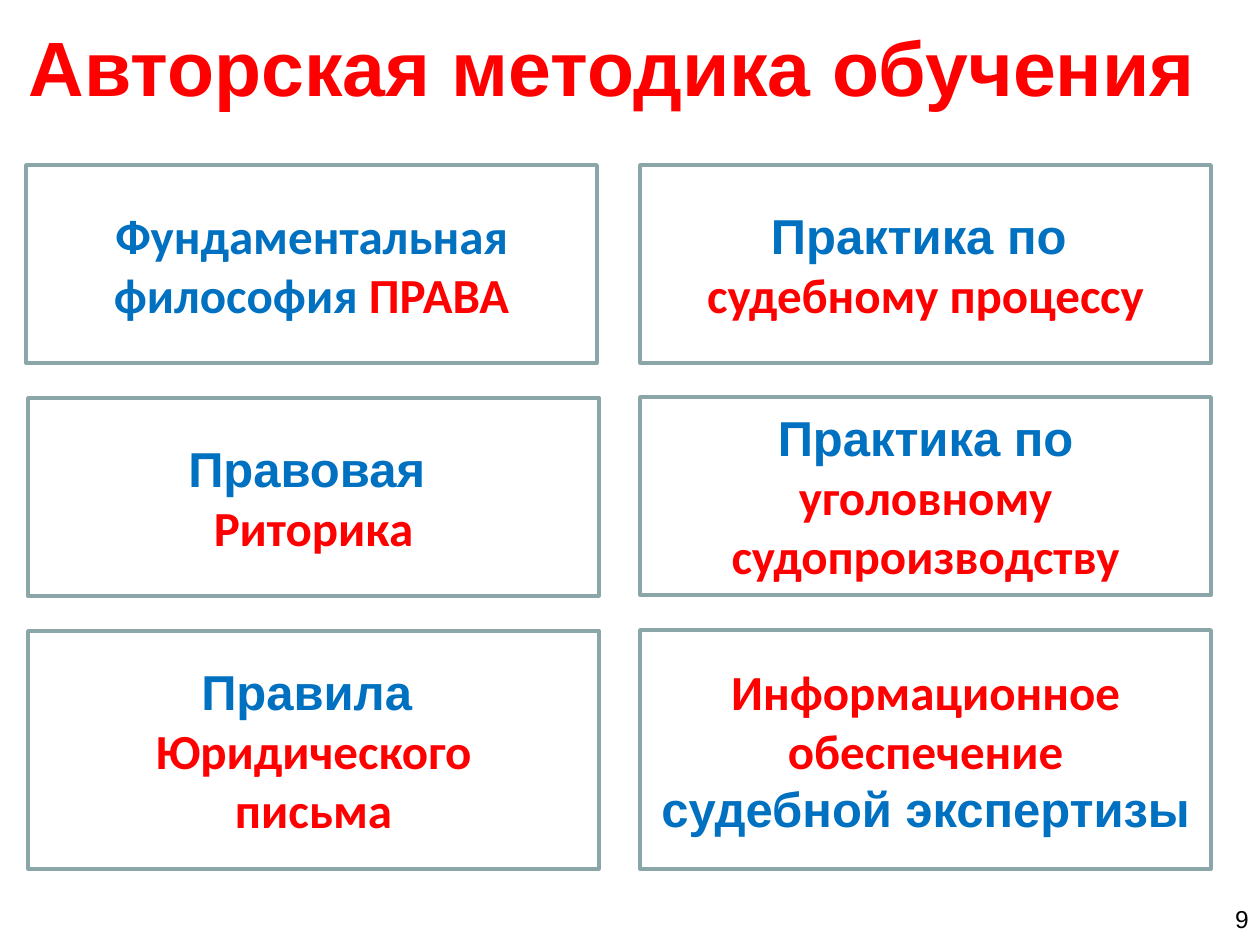
from typing import NamedTuple

from pptx import Presentation
from pptx.dml.color import RGBColor
from pptx.enum.shapes import MSO_SHAPE as Preset
from pptx.enum.text import MSO_ANCHOR as Anchor, PP_ALIGN as Align
from pptx.util import Emu, Pt

PX_PER_INCH = 126
EMU_PER_PX = 914400 / PX_PER_INCH
COLORS = {"red": "FF0000", "blue": "0070C0", "black": "000000", "border": "8AA6A8"}


class Span(NamedTuple):
    text: str
    color: str
    font: str = "Calibri"
    size: int = 28
    bold: bool = True


class Card(NamedTuple):
    left: int
    top: int
    height: int
    paragraphs: list[list[Span]]


CARD_WIDTH = 571
LEFT, RIGHT = 28, 640
CARDS = [
    Card(26, 165, 198, [[Span("Фундаментальная философия ", "blue"), Span("ПРАВА", "red")]]),
    Card(LEFT, 398, 198, [[Span("Правовая ", "blue", "Arial")], [Span("Риторика", "red")]]),
    Card(RIGHT, 397, 198, [
        [Span("Практика по\n", "blue", "Arial"), Span("уголовному судопроизводству", "red")],
    ]),
    Card(LEFT, 631, 238, [
        [Span("Правила ", "blue", "Arial")],
        [Span("Юридического", "red")],
        [Span("письма", "red")],
    ]),
    Card(RIGHT, 165, 198, [
        [Span("Практика по ", "blue", "Arial")],
        [Span("судебному процессу", "red")],
    ]),
    Card(RIGHT, 630, 239, [
        [Span("Информационное обеспечение\n", "red"), Span("судебной экспертизы", "blue", "Arial")],
    ]),
]


def px(value: int) -> Emu:
    return Emu(round(value * EMU_PER_PX))


def rgb(name: str) -> RGBColor:
    return RGBColor.from_string(COLORS[name])


def write_text(shape, paragraphs: list[list[Span]], align=Align.CENTER, anchor=Anchor.MIDDLE) -> None:
    frame = shape.text_frame
    frame.word_wrap = True
    frame.vertical_anchor = anchor
    for index, spans in enumerate(paragraphs):
        paragraph = frame.add_paragraph() if index else frame.paragraphs[0]
        paragraph.alignment = align
        for span in spans:
            run = paragraph.add_run()
            run.text = span.text.rstrip("\n")
            run.font.name = span.font
            run.font.size = Pt(span.size)
            run.font.bold = span.bold
            run.font.color.rgb = rgb(span.color)
            if span.text.endswith("\n"):
                paragraph.add_line_break()


def draw_card(slide, card: Card) -> None:
    shape = slide.shapes.add_shape(
        Preset.RECTANGLE, px(card.left), px(card.top), px(CARD_WIDTH), px(card.height)
    )
    shape.shadow.inherit = False
    shape.fill.background()
    shape.line.color.rgb = rgb("border")
    shape.line.width = Pt(2)
    write_text(shape, card.paragraphs)


def main() -> None:
    presentation = Presentation()
    presentation.slide_width = px(10 * PX_PER_INCH)
    presentation.slide_height = px(945)
    slide = presentation.slides.add_slide(presentation.slide_layouts[6])

    title = slide.shapes.add_textbox(px(0), px(16), px(1225), px(100))
    write_text(title, [[Span("Авторская методика обучения", "red", "Arial", 44)]])

    number = slide.shapes.add_textbox(px(968), px(898), px(293), px(50))
    write_text(number, [[Span("9", "black", "Arial", 14, False)]], Align.RIGHT, Anchor.TOP)

    for card in CARDS:
        draw_card(slide, card)

    presentation.save("out.pptx")


if __name__ == "__main__":
    main()
